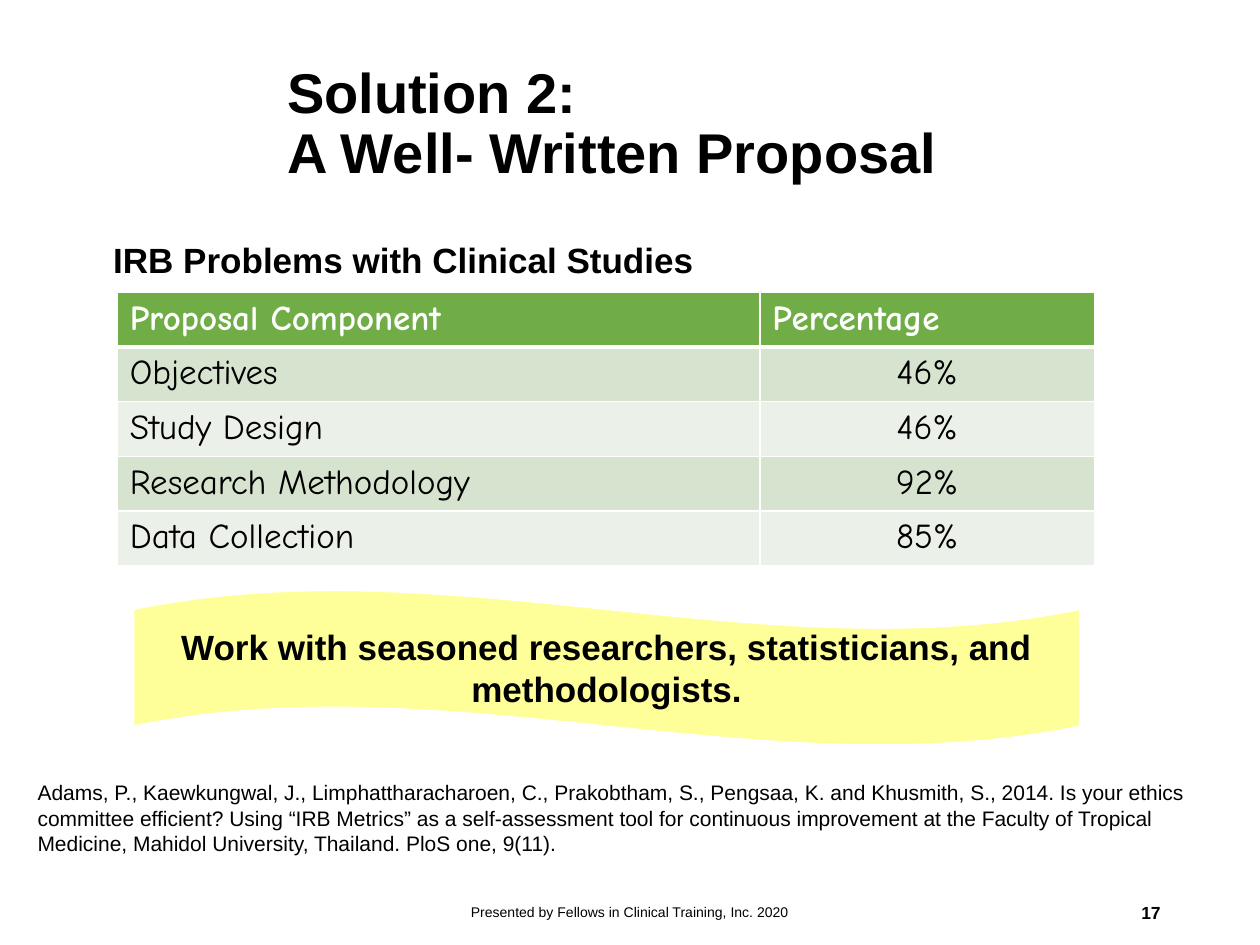
from lxml.etree import SubElement
from pptx import Presentation
from pptx.dml.color import RGBColor
from pptx.enum.shapes import MSO_SHAPE
from pptx.enum.text import MSO_ANCHOR, PP_ALIGN
from pptx.oxml.ns import qn
from pptx.util import Inches, Pt

COLORS = {
    "black": "000000",
    "white": "FFFFFF",
    "header": "70AD47",
    "band_dark": "D5E3CF",
    "band_light": "EBF1E9",
    "wave": "FFFF99",
}


def rgb(name):
    return RGBColor.from_string(COLORS[name])


class SlideBuilder:
    """Holds the text style and the current slide."""

    text_font = "Arial"
    table_font = "Comic Neue"

    def __init__(self, page):
        self.page = page

    def set_text(self, frame, text, size, color="black", bold=False, font=None,
                 align=PP_ALIGN.LEFT, spacing=None):
        para = frame.paragraphs[0]
        para.text = text
        para.alignment = align
        para.line_spacing = spacing
        style = {"size": Pt(size), "bold": bold, "name": font or self.text_font}
        for span in para.runs:
            for key, value in style.items():
                setattr(span.font, key, value)
            span.font.color.rgb = rgb(color)

    def text(self, place, text, size, anchor=MSO_ANCHOR.TOP, wrap=True,
             margin=0.05, **style):
        box = self.page.shapes.add_textbox(*map(Inches, place))
        layout = {"word_wrap": wrap, "vertical_anchor": anchor,
                  "margin_top": Inches(margin), "margin_bottom": Inches(margin)}
        for key, value in layout.items():
            setattr(box.text_frame, key, value)
        self.set_text(box.text_frame, text, size, **style)

    def wave(self, place, text, size):
        shape = self.page.shapes.add_shape(MSO_SHAPE.WAVE, *map(Inches, place))
        shape.shadow.inherit = False
        shape.fill.solid()
        shape.fill.fore_color.rgb = rgb("wave")
        shape.line.color.rgb = rgb("white")
        shape.line.width = Pt(1)
        shape.text_frame.word_wrap = True
        shape.text_frame.vertical_anchor = MSO_ANCHOR.MIDDLE
        self.set_text(shape.text_frame, text, size, bold=True, align=PP_ALIGN.CENTER)

    def borders(self, cell, widths):
        properties = cell._tc.get_or_add_tcPr()
        for side, width in widths.items():
            line = SubElement(properties, qn(f"a:ln{side}"), w=str(Pt(width)))
            fill = SubElement(line, qn("a:solidFill"))
            SubElement(fill, qn("a:srgbClr"), val=COLORS["white"])

    def table(self, left, top, widths, row_height, rows, size):
        frame = self.page.shapes.add_table(
            len(rows), len(widths), Inches(left), Inches(top),
            Inches(sum(widths)), Inches(row_height * len(rows)))
        table = frame.table
        for column, width in zip(table.columns, widths):
            column.width = Inches(width)
        for r, values in enumerate(rows):
            table.rows[r].height = Inches(row_height)
            header = r == 0
            band = "header" if header else ("band_light", "band_dark")[r % 2]
            for c, value in enumerate(values):
                cell = table.cell(r, c)
                # A thick rule separates the header from the body
                self.borders(cell, {"L": 1, "R": 1, "T": 3 if r == 1 else 1,
                                    "B": 3 if header else 1})
                cell.fill.solid()
                cell.fill.fore_color.rgb = rgb(band)
                centred = c == 1 and not header
                self.set_text(cell.text_frame, value, size, font=self.table_font,
                              color="white" if header else "black", bold=header,
                              align=PP_ALIGN.CENTER if centred else PP_ALIGN.LEFT)


def main():
    deck = Presentation()
    deck.slide_width, deck.slide_height = Inches(10), Inches(7.5)
    slide = SlideBuilder(deck.slides.add_slide(deck.slide_layouts[6]))

    # Title
    slide.text((2.18, 0.27, 7.14, 1.45), "Solution 2: \vA Well- Written Proposal",
               32, anchor=MSO_ANCHOR.MIDDLE, margin=0.1, bold=True, spacing=0.9)

    # Footer and page number
    slide.text((3.31, 7.04, 3.38, 0.4),
               "Presented by Fellows in Clinical Training, Inc. 2020", 8,
               anchor=MSO_ANCHOR.MIDDLE, align=PP_ALIGN.CENTER)
    slide.text((7.06, 7.04, 2.25, 0.4), "17", 10,
               anchor=MSO_ANCHOR.MIDDLE, align=PP_ALIGN.RIGHT, bold=True)

    # Table of problems
    slide.table(0.93, 2.32, (5.1, 2.66), 0.42, [
        ("Proposal Component", "Percentage"),
        ("Objectives", "46%"),
        ("Study Design", "46%"),
        ("Research Methodology", "92%"),
        ("Data Collection", "85%"),
    ], 20)

    # Citation
    slide.text((0.2, 6.14, 9.6, 0.71),
               "Adams, P., Kaewkungwal, J., Limphattharacharoen, C., Prakobtham, S., "
               "Pengsaa, K. and Khusmith, S., 2014. Is your ethics committee efficient? "
               "Using “IRB Metrics” as a self-assessment tool for continuous "
               "improvement at the Faculty of Tropical Medicine, Mahidol University, "
               "Thailand. PloS one, 9(11).", 12)

    # Table heading
    slide.text((0.8, 1.84, 4.88, 0.44), "IRB Problems with Clinical Studies", 20,
               wrap=False, bold=True)

    # Advice banner
    slide.wave((1.06, 4.68, 7.51, 1.24),
               "Work with seasoned researchers, statisticians, and methodologists.", 20)

    deck.save("out.pptx")


if __name__ == "__main__":
    main()
